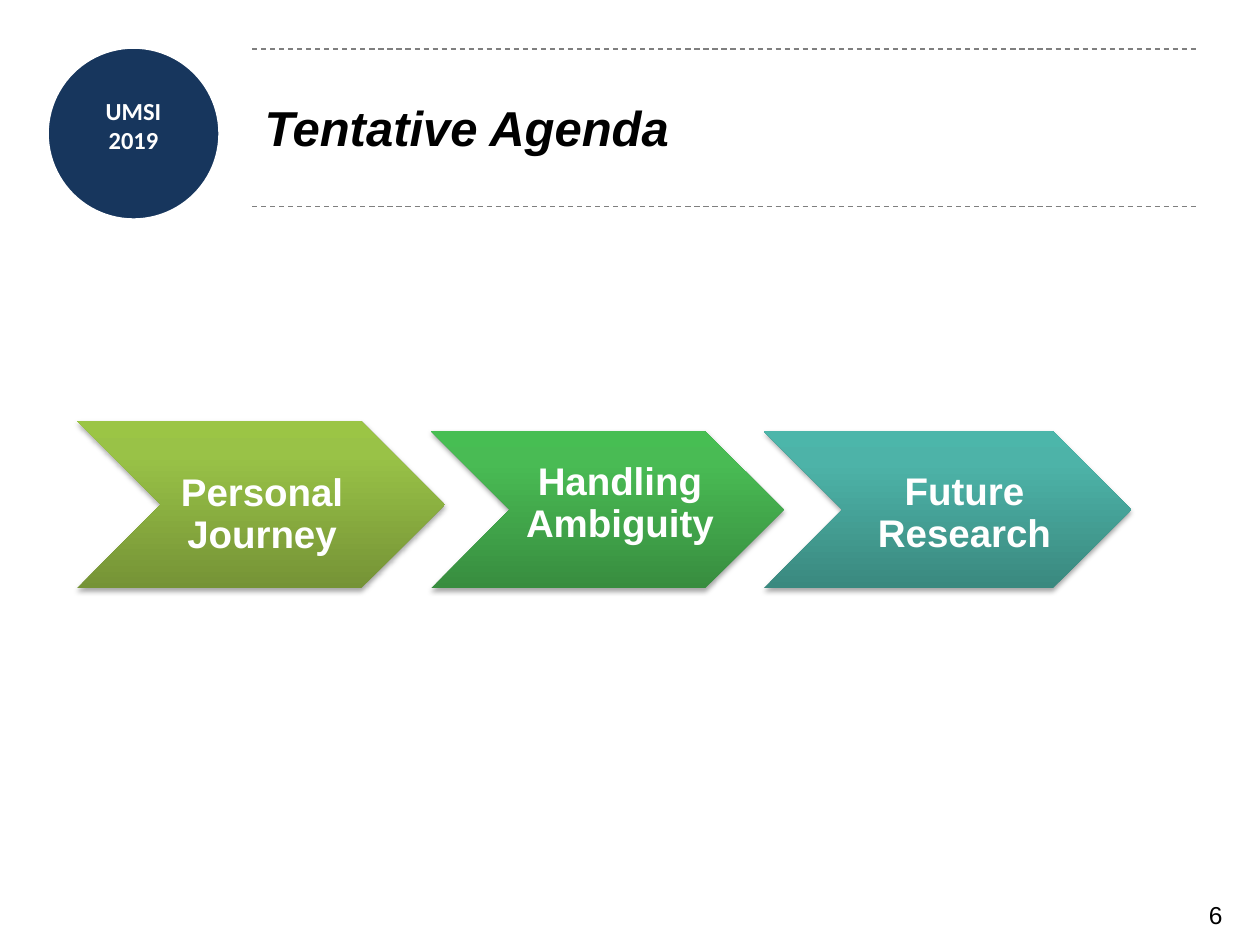
from lxml.etree import SubElement
from pptx import Presentation
from pptx.dml.color import RGBColor
from pptx.enum.dml import MSO_LINE
from pptx.enum.shapes import MSO_CONNECTOR, MSO_SHAPE
from pptx.enum.text import MSO_ANCHOR, PP_ALIGN
from pptx.oxml import parse_xml
from pptx.oxml.ns import nsdecls, qn
from pptx.util import Inches, Pt

COLORS = {"navy": "17365D", "white": "FFFFFF", "black": "000000", "rule": "7F7F7F"}
TITLE = "Tentative Agenda"
BADGE = ["UMSI", "2019"]
PAGE_NUMBER = "6"
RULE_LEFT, RULE_WIDTH, RULE_TOPS = 2, 7.5, (0.39, 1.64)
STEP_BOTTOM = 4.67

# label, chevron (left, width, height), label box, gradient from bottom to top
STEPS = [
    ("Personal Journey", (0.61, 2.92, 1.33), (1.03, 3.59, 2.05, 1),
     ("759336", "99C247", "9BC545")),
    ("Handling Ambiguity", (3.42, 2.8, 1.25), (3.87, 3.42, 2.05, 1.16),
     ("388D3F", "49BB54", "47BE53")),
    ("Future Research", (6.06, 2.92, 1.25), (6.7, 3.67, 1.86, 0.82),
     ("3A897F", "4DB3A8", "4CB6AA")),
]
GRADIENT_STOPS = (0, 80, 100)


def inches(values):
    return [Inches(value) for value in values]


def rgb(name):
    return RGBColor.from_string(COLORS[name])


def write_text(shape, lines, size, color="black", font="Arial", bold=False, italic=False,
               align=PP_ALIGN.LEFT, anchor=MSO_ANCHOR.TOP,
               margins=(0.1, 0.05, 0.1, 0.05), line_spacing=None):
    frame = shape.text_frame
    frame.word_wrap = True
    frame.vertical_anchor = anchor
    (frame.margin_left, frame.margin_top,
     frame.margin_right, frame.margin_bottom) = inches(margins)
    frame.text = "\n".join(lines)
    for paragraph in frame.paragraphs:
        paragraph.alignment = align
        paragraph.line_spacing = line_spacing
        for run in paragraph.runs:
            run.font.name, run.font.size = font, Pt(size)
            run.font.bold, run.font.italic = bold, italic
            run.font.color.rgb = rgb(color)


def add_text(slide, box, lines, size, **text_format):
    write_text(slide.shapes.add_textbox(*inches(box)), lines, size, **text_format)


def add_rule(slide, top):
    rule = slide.shapes.add_connector(
        MSO_CONNECTOR.STRAIGHT, *inches((RULE_LEFT, top, RULE_LEFT + RULE_WIDTH, top)))
    rule.line.color.rgb = rgb("rule")
    rule.line.width = Pt(0.75)
    rule.line.dash_style = MSO_LINE.DASH
    SubElement(rule.element.spPr, qn("a:effectLst"))


def add_chevron(slide, left, width, height, gradient):
    chevron = slide.shapes.add_shape(
        MSO_SHAPE.CHEVRON, *inches((left, STEP_BOTTOM - height, width, height)))
    chevron.adjustments[0] = 0.5
    chevron.line.fill.background()
    chevron.fill.background()
    properties = chevron.element.spPr
    stops = "".join(
        f'<a:gs pos="{position * 1000}"><a:srgbClr val="{color}"/></a:gs>'
        for position, color in zip(GRADIENT_STOPS, gradient))
    properties.replace(properties.find(qn("a:noFill")), parse_xml(
        f'<a:gradFill {nsdecls("a")} rotWithShape="1"><a:gsLst>{stops}</a:gsLst>'
        '<a:lin ang="16200000" scaled="0"/></a:gradFill>'))
    properties.append(parse_xml(
        f'<a:effectLst {nsdecls("a")}><a:outerShdw blurRad="{Pt(3.1)}" dist="{Pt(1.8)}" '
        f'dir="5400000" rotWithShape="0"><a:srgbClr val="{COLORS["black"]}">'
        '<a:alpha val="35000"/></a:srgbClr></a:outerShdw></a:effectLst>'))


def main():
    presentation = Presentation()
    presentation.slide_width, presentation.slide_height = inches((10, 7.5))
    slide = presentation.slides.add_slide(presentation.slide_layouts[5])

    badge = slide.shapes.add_shape(MSO_SHAPE.OVAL, *inches((0.37, 0.37, 1.38, 1.38)))
    badge.shadow.inherit = False
    badge.fill.solid()
    badge.fill.fore_color.rgb = rgb("navy")
    badge.line.color.rgb = rgb("white")
    badge.line.width = Pt(2.5)
    add_text(slide, (0.43, 0.76, 1.26, 0.47), BADGE, 14, color="white", font="Calibri",
             bold=True, align=PP_ALIGN.CENTER, margins=(0, 0, 0, 0))
    add_text(slide, (8.47, 7.09, 1.33, 0.41), [PAGE_NUMBER], 14, align=PP_ALIGN.RIGHT)

    for top in RULE_TOPS:
        add_rule(slide, top)
    title = slide.shapes.title
    title.left, title.top, title.width, title.height = inches(
        (RULE_LEFT, 0.38, RULE_WIDTH, 1.25))
    write_text(title, [TITLE], 28, bold=True, italic=True, anchor=MSO_ANCHOR.MIDDLE)

    for label, chevron, label_box, gradient in STEPS:
        add_chevron(slide, *chevron, gradient)
        add_text(slide, label_box, [label], 22, color="white", bold=True,
                 align=PP_ALIGN.CENTER, anchor=MSO_ANCHOR.MIDDLE,
                 margins=(0.07, 0.02, 0.02, 0.02), line_spacing=0.9)

    presentation.save("out.pptx")


if __name__ == "__main__":
    main()
